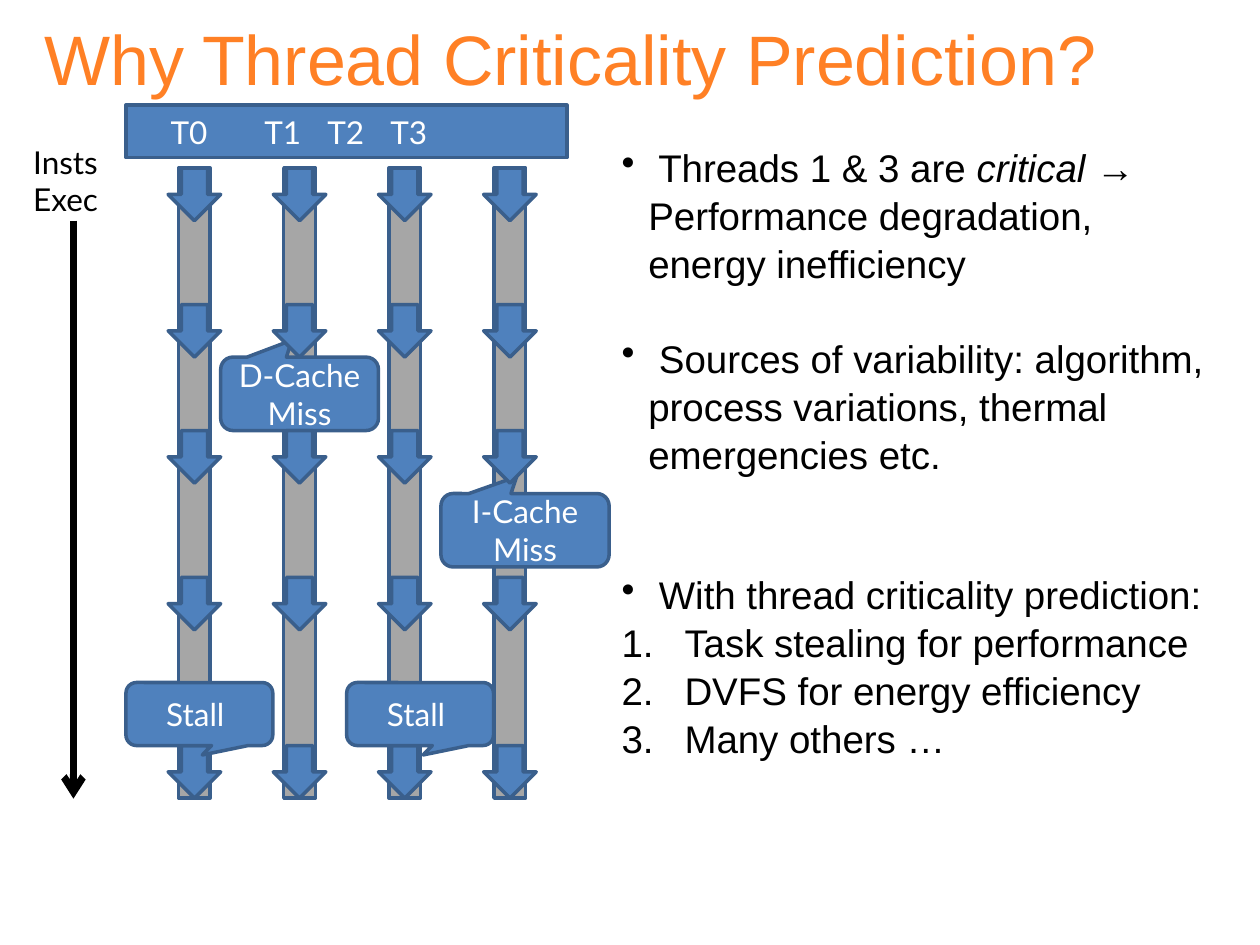
from lxml import etree
from pptx import Presentation
from pptx import util as u
from pptx.dml.color import RGBColor
from pptx.enum import shapes, text
from pptx.oxml.ns import qn

Cm, Pt = u.Cm, u.Pt
HUES = {"title": "FF8025", "blue": "4F81BD", "edge": "3A5F8C",
        "gray": "A6A6A6", "ink": "000000", "white": "FFFFFF"}
KIND = shapes.MSO_SHAPE
MID = text.MSO_ANCHOR.MIDDLE
ALIGN = text.PP_ALIGN

TOP, AXIS, PITCH = 3.39, 3.92, 2.12
BAR_W, BAR_H, ARROW = 0.64, 12.7, 1.06
COLS = [AXIS + i * PITCH for i in range(4)]
ROWS = [TOP, 6.14, 8.68, 11.64, 15.03]
LINE = 26.4

CACHE = [("D-Cache Miss", 4.45, 7.2, 3.18), ("I-Cache Miss", 8.89, 9.95, 3.39)]
STALLS = [2.54, 6.99]
POINTS = [
    (0, [(" Threads 1 & 3 are ", False), ("critical ", True),
         ("→ Performance degradation, energy inefficiency", False)]),
    (LINE, [(" Sources of variability: algorithm, process variations, "
             "thermal emergencies etc.", False)]),
    (2 * LINE, [(" With thread criticality prediction:", False)]),
]
STEPS = ["Task stealing for performance", "DVFS for energy efficiency",
         "Many others …"]


def color(key):
    return RGBColor.from_string(HUES[key])


def style(para, name, size, hue):
    font = para.font
    font.name, font.size = name, Pt(size)
    font.color.rgb = color(hue)


def indent(para, left, first):
    props = para._p.get_or_add_pPr()
    props.set("marL", str(Cm(left)))
    props.set("indent", str(Cm(first)))
    return props


def add_box(slide, left, top, width, height):
    box = slide.shapes.add_textbox(Cm(left), Cm(top), Cm(width), Cm(height))
    box.text_frame.word_wrap = True
    return box.text_frame


def add_block(slide, kind, left, top, width, height, fill="blue"):
    block = slide.shapes.add_shape(kind, Cm(left), Cm(top), Cm(width), Cm(height))
    block.shadow.inherit = False
    block.fill.solid()
    block.fill.fore_color.rgb = color(fill)
    block.line.color.rgb = color("edge")
    block.line.width = Pt(2)
    return block


def add_label(block, words, align=ALIGN.CENTER):
    frame = block.text_frame
    frame.word_wrap, frame.vertical_anchor = True, MID
    para = frame.paragraphs[0]
    para.text, para.alignment = words, align
    return para


def add_note(slide, words, left, top, width, height, tip):
    """Add a callout whose tip is given as shares of its size."""
    note = add_block(slide, KIND.ROUNDED_RECTANGULAR_CALLOUT,
                     left, top, width, height)
    for i, share in enumerate(tip):
        note.adjustments[i] = share
    style(add_label(note, words), "Lato", 18, "white")


def add_head(slide):
    head = add_block(slide, KIND.RECTANGLE, 2.54, 2.12, 8.89, 1.06)
    para = add_label(head, "T0 \tT1\tT2\tT3", ALIGN.LEFT)
    tabs = etree.SubElement(indent(para, 0, 0.65), qn("a:tabLst"))
    for i in range(1, 4):
        etree.SubElement(tabs, qn("a:tab"), pos=str(Cm(2.54 * i)), algn="l")
    style(para, "Lato", 18, "white")


def add_title(slide):
    frame = add_box(slide, 0.64, -0.43, 24.13, 3.18)
    frame.vertical_anchor = MID
    para = frame.paragraphs[0]
    para.text = "Why Thread Criticality Prediction?"
    style(para, "Arial", 40, "title")


def add_points(slide):
    frame = add_box(slide, 12.28, 2.75, 12.27, 12.47)
    items = [(gap, runs, 0.54, "buChar", {"char": "•"}) for gap, runs in POINTS]
    items += [(0, [(step, False)], 1.27, "buAutoNum", {"type": "arabicPeriod"})
              for step in STEPS]
    for i, (gap, runs, left, tag, mark) in enumerate(items):
        para = frame.add_paragraph() if i else frame.paragraphs[0]
        para.line_spacing = 1.04
        if gap:
            para.space_before = Pt(gap)
        etree.SubElement(indent(para, left, -left), qn("a:" + tag), **mark)
        style(para, "Arial", 22, "ink")
        for words, slant in runs:
            run = para.add_run()
            run.text = words
            if slant:
                run.font.italic = True


def add_axis(slide):
    frame = add_box(slide, 0.42, 2.75, 1.91, 1.8)
    para = frame.paragraphs[0]
    para.text = "Insts Exec"
    style(para, "Lato", 18, "ink")
    line = slide.shapes.add_connector(shapes.MSO_CONNECTOR.STRAIGHT,
                                      Cm(1.48), Cm(4.45), Cm(1.48), Cm(16.1))
    line.line.color.rgb = color("ink")
    line.line.width = Pt(4)
    etree.SubElement(line.line._get_or_add_ln(), qn("a:tailEnd"), type="arrow")
    etree.SubElement(line._element.spPr, qn("a:effectLst"))


def main():
    deck = Presentation()
    deck.slide_width, deck.slide_height = Cm(25.4), Cm(19.05)
    slide = deck.slides.add_slide(deck.slide_layouts[6])
    add_title(slide)
    for mid in COLS:
        add_block(slide, KIND.RECTANGLE, mid - BAR_W / 2, TOP, BAR_W, BAR_H, "gray")
    for words, left, top, width in CACHE:
        add_note(slide, words, left, top, width, 1.48, (-0.05, -0.73))
    for top in ROWS:
        for mid in COLS:
            add_block(slide, KIND.DOWN_ARROW, mid - ARROW / 2, top, ARROW, ARROW)
    for left in STALLS:
        add_note(slide, "Stall ", left, 13.76, 2.96, 1.27, (0.02, 0.65))
    add_head(slide)
    add_points(slide)
    add_axis(slide)
    deck.save("out.pptx")


if __name__ == "__main__":
    main()
